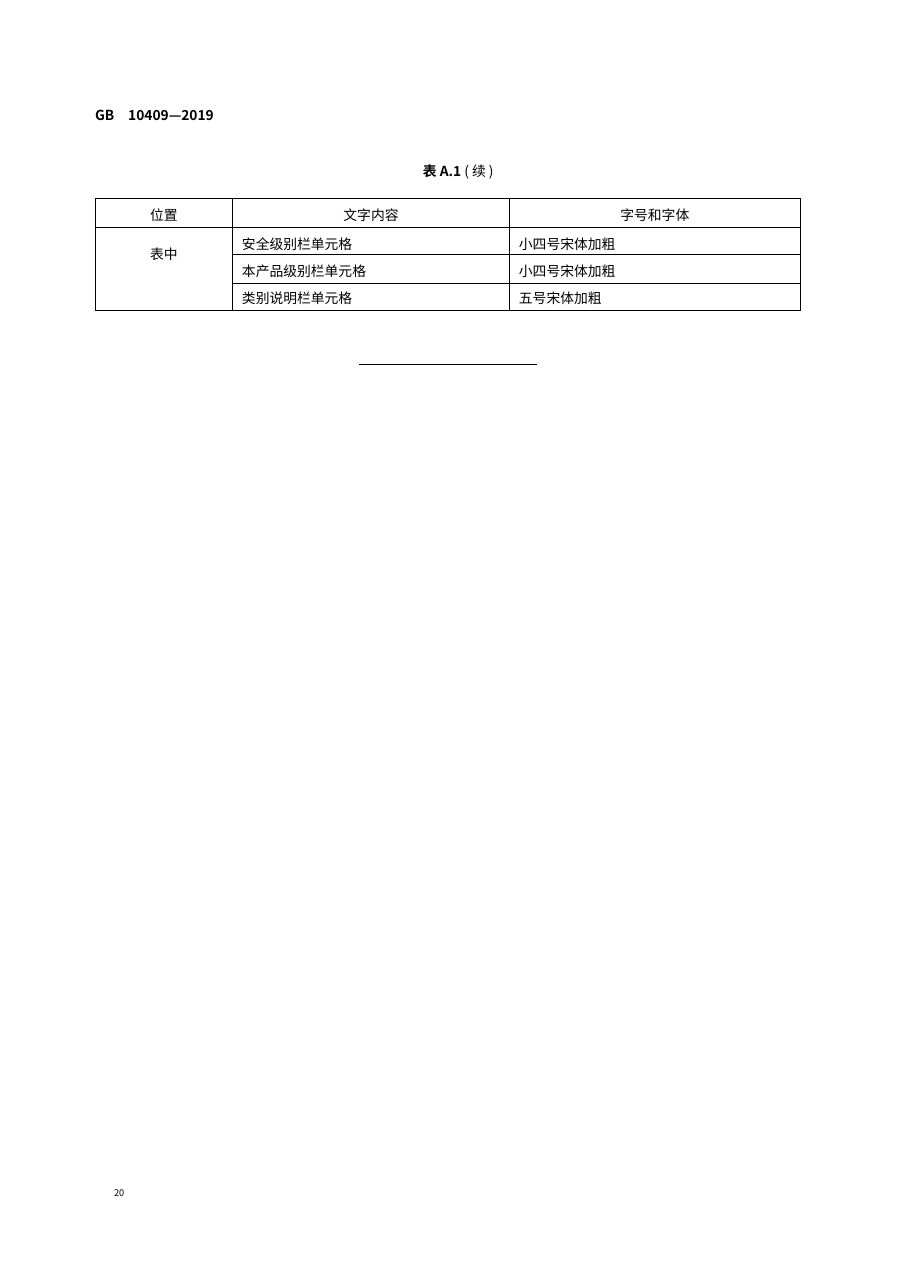
from lxml.etree import SubElement
from pptx import Presentation
from pptx.dml.color import RGBColor
from pptx.enum.shapes import MSO_CONNECTOR
from pptx.enum.text import MSO_ANCHOR, PP_ALIGN
from pptx.oxml.ns import qn
from pptx.util import Pt

# Content
STANDARD_NUMBER = "GB　10409—2019"
CAPTION = [("表 A.1 ", True), ("( 续 )", False)]
PAGE_NUMBER = "20"
ROWS = [
    ("位置", "文字内容", "字号和字体"),
    ("表中", "安全级别栏单元格", "小四号宋体加粗"),
    ("", "本产品级别栏单元格", "小四号宋体加粗"),
    ("", "类别说明栏单元格", "五号宋体加粗"),
]

# Layout in points
PAGE_SIZE = (594.72, 841.68)
FONT = "Noto Sans CJK SC"
BLACK = "000000"
LEFT = 62.2
TABLE_TOP = 129.8
COLUMN_WIDTHS = (89.8, 181, 190)
ROW_HEIGHTS = (18.9, 17.7, 18.9, 17.7)
TEXT_OFFSETS = (3.75, 3.75, 3.75, 2.5)
MERGED_OFFSET = 10.4
CELL_INDENT = 6.2
END_RULE = (234.6, 350.9, 238.2)


def color(hex_string):
    return RGBColor.from_string(hex_string)


def style_run(run, size=9, bold=False):
    run.font.size = Pt(size)
    run.font.bold = bold
    run.font.color.rgb = color(BLACK)
    run.font.name = FONT
    SubElement(run.font._element, qn("a:ea"), typeface=FONT)


def add_text(page, left, top, width, height, spans, size=9, align=PP_ALIGN.LEFT):
    box = page.shapes.add_textbox(Pt(left), Pt(top), Pt(width), Pt(height))
    frame = box.text_frame
    frame.word_wrap = True
    frame.margin_left = frame.margin_right = 0
    frame.margin_top = frame.margin_bottom = 0
    para = frame.paragraphs[0]
    para.alignment = align
    for text, bold in spans:
        span = para.add_run()
        span.text = text
        style_run(span, size, bold)


def add_borders(cell):
    properties = cell._tc.get_or_add_tcPr()
    for side in ("lnL", "lnR", "lnT", "lnB"):
        line = SubElement(properties, qn(f"a:{side}"), w=str(Pt(0.5)))
        fill = SubElement(line, qn("a:solidFill"))
        SubElement(fill, qn("a:srgbClr"), val=BLACK)


def add_format_table(page):
    frame = page.shapes.add_table(
        len(ROWS), len(COLUMN_WIDTHS), Pt(LEFT), Pt(TABLE_TOP),
        Pt(sum(COLUMN_WIDTHS)), Pt(sum(ROW_HEIGHTS)))
    table = frame.table
    table.first_row = table.horz_banding = False
    for column, width in zip(table.columns, COLUMN_WIDTHS):
        column.width = Pt(width)
    for row, height in zip(table.rows, ROW_HEIGHTS):
        row.height = Pt(height)

    for row_index, texts in enumerate(ROWS):
        for column_index, text in enumerate(texts):
            cell = table.cell(row_index, column_index)
            centered = row_index == 0 or column_index == 0
            merged = row_index > 0 and column_index == 0
            cell.margin_left = Pt(0 if centered else CELL_INDENT)
            cell.margin_right = cell.margin_bottom = 0
            cell.margin_top = Pt(MERGED_OFFSET if merged else TEXT_OFFSETS[row_index])
            cell.vertical_anchor = MSO_ANCHOR.TOP
            add_borders(cell)
            cell.fill.background()
            if text:
                para = cell.text_frame.paragraphs[0]
                para.text = text
                para.alignment = PP_ALIGN.CENTER if centered else PP_ALIGN.LEFT
                style_run(para.runs[0])
    table.cell(1, 0).merge(table.cell(len(ROWS) - 1, 0))


def add_end_rule(page):
    start, end, y = END_RULE
    rule = page.shapes.add_connector(
        MSO_CONNECTOR.STRAIGHT, Pt(start), Pt(y), Pt(end), Pt(y))
    rule.line.color.rgb = color(BLACK)
    rule.line.width = Pt(0.6)
    SubElement(rule._element.spPr, qn("a:effectLst"))


def main():
    deck = Presentation()
    deck.slide_width, deck.slide_height = map(Pt, PAGE_SIZE)
    page = deck.slides.add_slide(deck.slide_layouts[6])

    # Running head and table caption
    add_text(page, LEFT, 70, 260.4, 13, [(STANDARD_NUMBER, True)])
    add_text(page, LEFT, 106.4, 260.4, 13, CAPTION, align=PP_ALIGN.RIGHT)

    # Table, closing rule and page number
    add_format_table(page)
    add_end_rule(page)
    add_text(page, 74.6, 776, 12, 9, [(PAGE_NUMBER, False)], size=6)

    deck.save("out.pptx")


if __name__ == "__main__":
    main()
